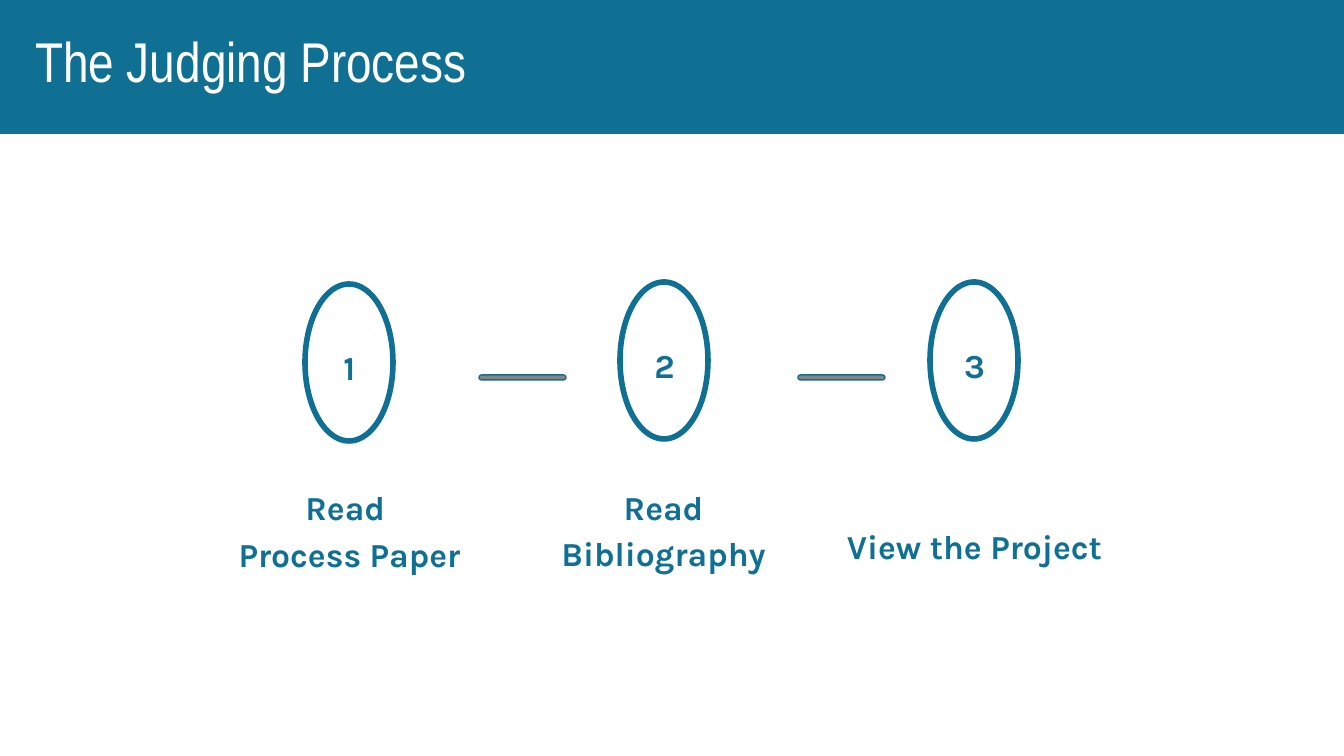
from pptx import Presentation
from pptx.dml.color import RGBColor
from pptx.enum.shapes import MSO_SHAPE
from pptx.enum.text import MSO_ANCHOR, PP_ALIGN
from pptx.util import Pt

PX = 914400 / 134.4
COLOURS = {"teal": "107094", "grey": "858585", "white": "FFFFFF"}


def add_shape(kind, bounds, fill, line_width):
    """Add a teal-outlined shape; bounds are left, top, width, height in px."""
    shape = page.shapes.add_shape(kind, *[round(length * PX) for length in bounds])
    shape.shadow.inherit = False
    if fill:
        shape.fill.solid()
        shape.fill.fore_color.rgb = RGBColor.from_string(COLOURS[fill])
    else:
        shape.fill.background()
    shape.line.color.rgb = RGBColor.from_string(COLOURS["teal"])
    shape.line.width = Pt(line_width)
    return shape


def add_text(bounds, lines, anchor=MSO_ANCHOR.TOP, font="Karla", size=18,
             colour="teal", bold=True, align=PP_ALIGN.CENTER, spacing=1.15):
    box = page.shapes.add_textbox(*[round(length * PX) for length in bounds])
    frame = box.text_frame
    frame.word_wrap = True
    frame.vertical_anchor = anchor
    frame.margin_left = frame.margin_right = round(13.44 * PX)
    frame.margin_top = frame.margin_bottom = round(13.44 * PX)
    frame.text = "\n".join(lines)
    for paragraph in frame.paragraphs:
        paragraph.alignment = align
        paragraph.line_spacing = spacing
        paragraph.font.name = font
        paragraph.font.size = Pt(size)
        paragraph.font.bold = bold
        paragraph.font.color.rgb = RGBColor.from_string(COLOURS[colour])


deck = Presentation()
deck.slide_width = round(1344 * PX)
deck.slide_height = round(756 * PX)
page = deck.slides.add_slide(deck.slide_layouts[6])

# Title band
add_shape(MSO_SHAPE.RECTANGLE, (-7, -23, 1357, 156), "teal", 0.75)
add_text((22, 13, 1252, 85), ["The Judging Process"], font="Arial Narrow", size=30,
         colour="white", bold=False, align=PP_ALIGN.LEFT, spacing=1.0)

# Bars between the steps
for left in (479, 798):
    bar = add_shape(MSO_SHAPE.ROUNDED_RECTANGLE, (left, 375, 87, 5), "grey", 0.75)
    bar.adjustments[0] = 0.5

# Steps: oval position, label bounds, label lines, label anchor
steps = [
    (305, 284, (223, 482, 253, 91), ["Read ", "Process Paper"], MSO_ANCHOR.MIDDLE),
    (620, 282, (536, 482, 255, 105), ["Read Bibliography"], MSO_ANCHOR.BOTTOM),
    (930, 282, (828, 489, 293, 91), ["View the Project"], MSO_ANCHOR.BOTTOM),
]
for number, (left, top, label_bounds, label, anchor) in enumerate(steps, 1):
    add_shape(MSO_SHAPE.OVAL, (left, top, 88, 157), None, 3)
    add_text((left + 12, top + 43, 65, 85), [str(number)])
    add_text(label_bounds, label, anchor)

deck.save("out.pptx")
